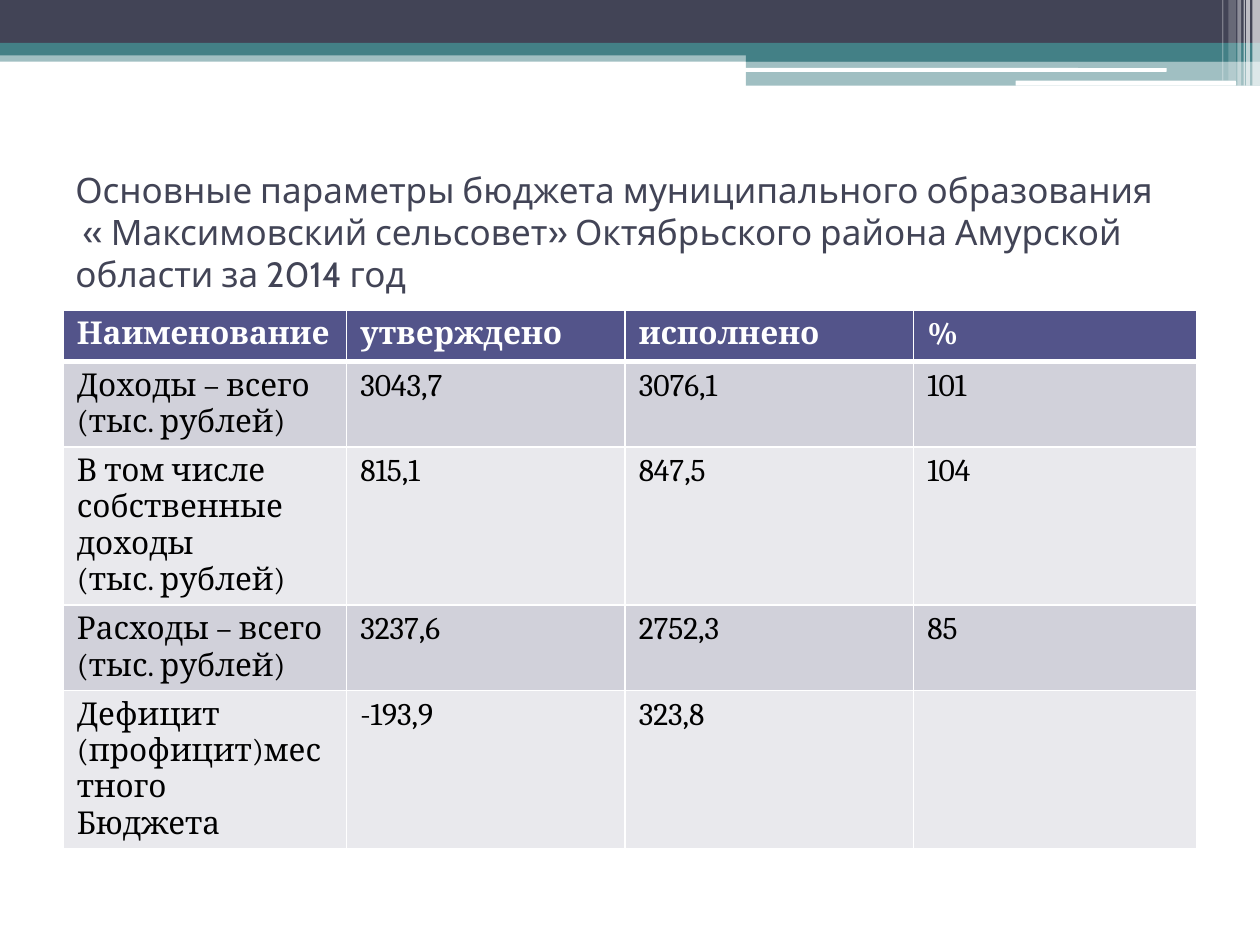
from dataclasses import dataclass

from lxml import etree
from pptx import Presentation
from pptx import util as u
from pptx.dml.color import RGBColor
from pptx.enum import shapes, text
from pptx.oxml.ns import qn

SCALE = 9144


def px(n):
    return u.Emu(n * SCALE)


@dataclass(frozen=True)
class Theme:
    dark: str = "424456"
    teal: str = "438086"
    white: str = "FFFFFF"
    black: str = "000000"
    head: str = "53548A"
    bands: tuple = ("D1D1DA", "E9E9ED")
    title: int = 20
    body: int = 18
    sans: str = "Cabin"
    serif: str = "Cambria"


class Deck:
    def __init__(self, theme):
        self.theme = theme
        self.show = Presentation()
        self.show.slide_width, self.show.slide_height = px(1000), px(750)
        self.slide = self.show.slides.add_slide(self.show.slide_layouts[6])

    def paint(self, fill, color, alpha=100):
        fill.solid()
        fill.fore_color.rgb = RGBColor.from_string(color)
        if alpha < 100:
            node = fill.fore_color._xFill.find(qn("a:srgbClr"))
            etree.SubElement(node, qn("a:alpha"), val=str(alpha * 1000))

    def style(self, frame, color, **form):
        for para in frame.paragraphs:
            for run in para.runs:
                for key, val in form.items():
                    setattr(run.font, key, val)
                run.font.color.rgb = RGBColor.from_string(color)

    def bar(self, box, color, alpha=100, rounded=False):
        kind = shapes.MSO_SHAPE
        form = kind.ROUNDED_RECTANGLE if rounded else kind.RECTANGLE
        shape = self.slide.shapes.add_shape(form, *map(px, box))
        shape.shadow.inherit = False
        shape.line.fill.background()
        self.paint(shape.fill, color, alpha)

    def title(self, box, words):
        frame = self.slide.shapes.add_textbox(*map(px, box)).text_frame
        form = {"word_wrap": True, "auto_size": text.MSO_AUTO_SIZE.NONE,
                "vertical_anchor": text.MSO_ANCHOR.MIDDLE, "text": words}
        for key, val in form.items():
            setattr(frame, key, val)
        self.style(frame, self.theme.dark, name=self.theme.sans,
                   size=u.Pt(self.theme.title))

    def edge(self, cell, side, width):
        props = cell._tc.get_or_add_tcPr()
        line = etree.SubElement(props, qn(f"a:ln{side}"), w=str(u.Pt(width)))
        fill = etree.SubElement(line, qn("a:solidFill"))
        etree.SubElement(fill, qn("a:srgbClr"), val=self.theme.white)

    def cell(self, cell, row, words):
        head = row == 0
        form = {"text": words, "margin_left": px(11), "margin_right": px(11),
                "margin_top": px(5), "margin_bottom": px(5)}
        for key, val in form.items():
            setattr(cell, key, val)
        for side in "LRTB":
            thick = (row, side) in ((0, "B"), (1, "T"))
            self.edge(cell, side, 3 if thick else 1)
        theme = self.theme
        self.paint(cell.fill, theme.head if head else theme.bands[(row - 1) % 2])
        self.style(cell.text_frame, theme.white if head else theme.black,
                   name=theme.serif, size=u.Pt(theme.body), bold=head)

    def table(self, box, cols, high, data):
        frame = self.slide.shapes.add_table(len(data), len(cols), *map(px, box))
        grid = frame.table
        grid.horz_banding = False
        for col, wide in zip(grid.columns, cols):
            col.width = px(wide)
        for i, words in enumerate(data):
            grid.rows[i].height = px(high)
            for j, word in enumerate(words):
                self.cell(grid.cell(i, j), i, word)
        frame.height = px(box[3])

    def save(self):
        self.show.save("out.pptx")


BUDGET = [
    ("Наименование", "утверждено", "исполнено", "%"),
    ("Доходы – всего\n(тыс. рублей)", "3043,7", "3076,1", "101"),
    ("В том числе\nсобственные доходы\n(тыс. рублей)", "815,1", "847,5", "104"),
    ("Расходы – всего\n(тыс. рублей)", "3237,6", "2752,3", "85"),
    ("Дефицит (профицит)местного\nБюджета", "-193,9", "323,8", ""),
]


def main():
    theme = Theme()
    deck = Deck(theme)
    for box, color, alpha in (
        ((0, 40, 1000, 9), theme.teal, 50),
        ((0, 0, 1000, 34), theme.dark, 100),
        ((0, 34, 1000, 10), theme.teal, 100),
        ((592, 39, 408, 10), theme.teal, 100),
        ((592, 48, 408, 20), theme.teal, 50),
    ):
        deck.bar(box, color, alpha)
    for box in ((591, 54, 335, 3), (806, 64, 175, 4)):
        deck.bar(box, theme.white, rounded=True)
    for left, wide, high, alpha in (
        (994, 6, 68, 65), (989, 3, 68, 65), (987, 1, 68, 60),
        (982, 3, 68, 40), (975, 6, 64, 20), (970, 1, 64, 30),
    ):
        deck.bar((left, 0, wide, high), theme.white, alpha)
    deck.title((50, 125, 900, 117),
               "Основные параметры бюджета муниципального образования\v"
               " « Максимовский сельсовет» Октябрьского района Амурской "
               "области за 2014 год")
    deck.table((50, 246, 900, 470), (225, 221, 229, 225), 41, BUDGET)
    deck.save()


if __name__ == "__main__":
    main()
